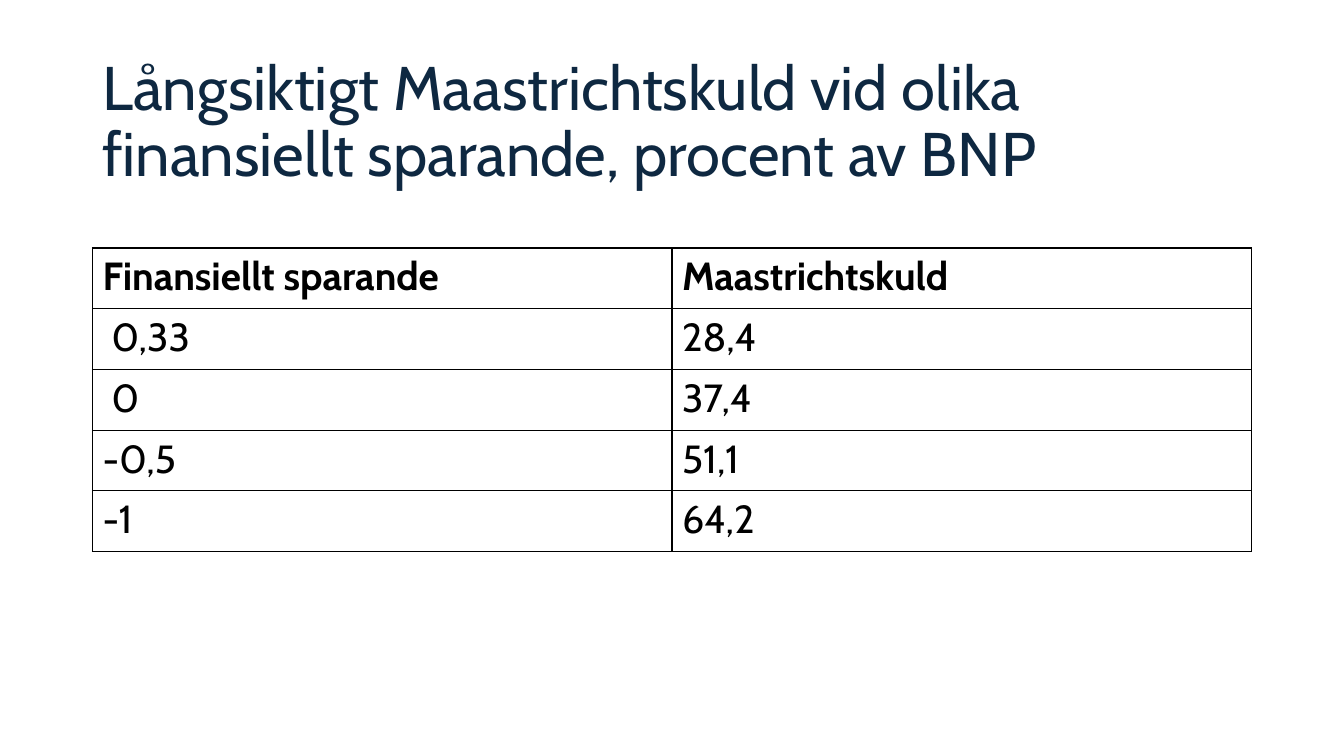
from dataclasses import dataclass

from lxml import etree
from pptx import Presentation
from pptx.dml.color import RGBColor
from pptx.enum.text import MSO_ANCHOR, MSO_AUTO_SIZE, PP_ALIGN
from pptx.oxml.ns import qn
from pptx.slide import Slide
from pptx.table import _Cell
from pptx.text.text import _Paragraph
from pptx.util import Cm, Pt

LEFT = PP_ALIGN.LEFT
MIDDLE = MSO_ANCHOR.MIDDLE
NO_AUTOFIT = MSO_AUTO_SIZE.NONE

FONT = "Cabin"
NAVY = "0E2841"
BLACK = "000000"
MARGIN = Cm(2.33)
CONTENT_WIDTH = Cm(29.21)
ROW_HEIGHT = Cm(1.53)
BORDER_WIDTH = Pt(1)
HEADING = "Långsiktigt Maastrichtskuld vid olika finansiellt sparande, procent av BNP"


@dataclass(frozen=True)
class DebtRow:
    saving: str
    debt: str
    bold: bool = False


DEBT_ROWS = [
    DebtRow("Finansiellt sparande", "Maastrichtskuld", bold=True),
    DebtRow(" 0,33", "28,4"),
    DebtRow(" 0", "37,4"),
    DebtRow("-0,5", "51,1"),
    DebtRow("-1", "64,2"),
]


def format_text(paragraph: _Paragraph, size: float, color: str, bold: bool = False) -> None:
    paragraph.alignment = LEFT
    font = paragraph.font
    font.name = FONT
    font.size = Pt(size)
    font.bold = bold
    font.color.rgb = RGBColor.from_string(color)


def add_borders(cell: _Cell, color: str) -> None:
    properties = cell._tc.get_or_add_tcPr()
    for side in ("a:lnL", "a:lnR", "a:lnT", "a:lnB"):
        line = etree.SubElement(properties, qn(side), w=str(BORDER_WIDTH))
        fill = etree.SubElement(line, qn("a:solidFill"))
        etree.SubElement(fill, qn("a:srgbClr"), val=color)


def add_heading(slide: Slide) -> None:
    heading = slide.shapes.title
    heading.left, heading.top = MARGIN, Cm(1.27)
    heading.width, heading.height = CONTENT_WIDTH, Cm(3.68)
    frame = heading.text_frame
    frame.text = HEADING
    frame.word_wrap = True
    frame.auto_size = NO_AUTOFIT
    frame.vertical_anchor = MIDDLE
    paragraph = frame.paragraphs[0]
    paragraph.line_spacing = 0.9
    format_text(paragraph, 44, NAVY)


def add_debt_table(slide: Slide) -> None:
    table = slide.shapes.add_table(
        len(DEBT_ROWS), 2, MARGIN, Cm(6.25), CONTENT_WIDTH, ROW_HEIGHT * len(DEBT_ROWS)
    ).table
    table.first_row = False
    table.horz_banding = False
    for table_row, debt_row in zip(table.rows, DEBT_ROWS):
        for cell, value in zip(table_row.cells, (debt_row.saving, debt_row.debt)):
            cell.text = value
            format_text(cell.text_frame.paragraphs[0], 28, BLACK, debt_row.bold)
            add_borders(cell, BLACK)
            cell.fill.background()


def main() -> None:
    presentation = Presentation()
    presentation.slide_width = Cm(33.87)
    presentation.slide_height = Cm(19.05)
    slide = presentation.slides.add_slide(presentation.slide_layouts.get_by_name("Title Only"))
    add_heading(slide)
    add_debt_table(slide)
    presentation.save("out.pptx")


if __name__ == "__main__":
    main()
